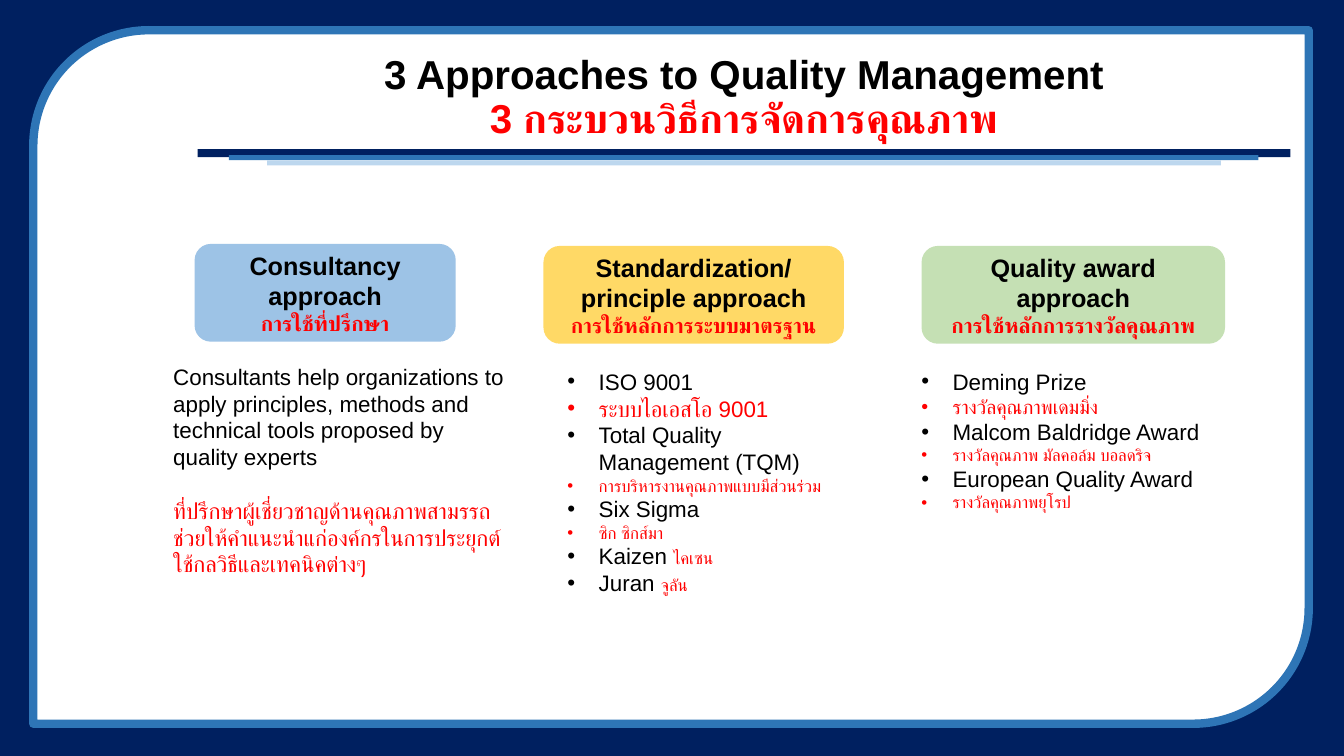
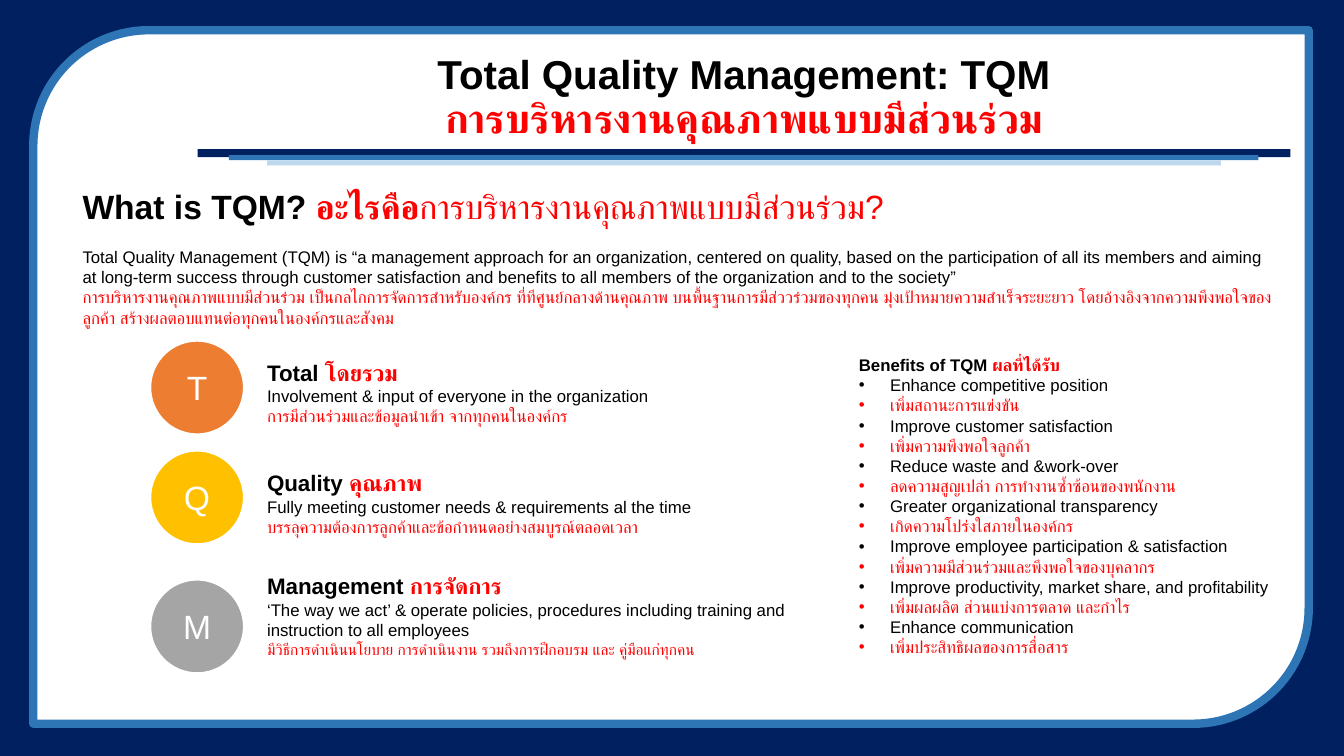
from lxml import etree
from pptx import Presentation
from pptx.dml.color import RGBColor
from pptx.enum import lang, shapes, text
from pptx.oxml.ns import qn

PX = 9144
FONT = "Arial"
NAVY, BLUE, PALE = "002060", "2E75B6", "BDD7EE"
BLACK, WHITE, RED = "000000", "FFFFFF", "FF0000"
KIND = shapes.MSO_SHAPE
MID = text.MSO_ANCHOR.MIDDLE


def hue(code):
    return RGBColor.from_string(code)


def box(px):
    return [n * PX for n in px]


def en(words, size, bold=False, color=BLACK):
    return words, size, bold, color


def th(words, size, bold=False):
    return en(words, size, bold, RED)


def mark(par):
    props = par._p.get_or_add_pPr()
    props.set("marL", str(31 * PX))
    props.set("indent", str(-31 * PX))
    etree.SubElement(props, qn("a:buFont"), typeface=FONT)
    etree.SubElement(props, qn("a:buChar"), char="•")


def say(frame, pars, bullets=(), center=False, middle=False, wrap=True, gap=0, lead=None):
    frame.word_wrap = wrap
    if middle:
        frame.vertical_anchor = MID
    for i, runs in enumerate(pars):
        par = frame.add_paragraph() if i else frame.paragraphs[0]
        if center:
            par.alignment = text.PP_ALIGN.CENTER
        if lead:
            par.line_spacing = lead
        if gap and i:
            par.space_before = gap * 12700
        if i in bullets:
            mark(par)
        for words, size, bold, color in runs:
            run = par.add_run()
            run.text = words
            font = run.font
            font.size, font.bold, font.name = int(size * 12700), bold, FONT
            font.color.rgb = hue(color)
            if color == RED:
                font.language_id = lang.MSO_LANGUAGE_ID.THAI
            etree.SubElement(run._r.get_or_add_rPr(), qn("a:cs"), typeface=FONT)


def note(slide, at, pars, **form):
    say(slide.shapes.add_textbox(*box(at)).text_frame, pars, **form)


def form(slide, kind, at, fill, line=None, width=0):
    shape = slide.shapes.add_shape(kind, *box(at))
    shape.shadow.inherit = False
    shape.fill.solid()
    shape.fill.fore_color.rgb = hue(fill)
    if line:
        shape.line.color.rgb = hue(line)
        shape.line.width = int(width * 12700)
    else:
        shape.line.fill.background()
    return shape


def page(deck, title, local):
    slide = deck.slides.add_slide(deck.slide_layouts[6])
    slide.background.fill.solid()
    slide.background.fill.fore_color.rgb = hue(NAVY)
    form(slide, KIND.ROUND_2_DIAG_RECTANGLE, (33, 30, 1265, 688), WHITE, BLUE, 6)
    bars = [((196, 148, 1084, 8), NAVY), ((227, 154, 1021, 5), BLUE), ((265, 159, 946, 5), PALE)]
    for at, fill in bars:
        form(slide, KIND.RECTANGLE, at, fill)
    note(slide, (196, 49, 1084, 97), [[en(title, 28.8, True)], [th(local, 28.8, True)]],
         center=True, middle=True, lead=0.9)
    return slide


def card(slide, at, fill, head, local):
    shape = form(slide, KIND.ROUNDED_RECTANGLE, at, fill)
    say(shape.text_frame, [[en(head, 18, True)], [th(local, 15, True)]], center=True, middle=True)


def step(slide, top, fill, key, base, wide, head, local, body, more, size=12):
    disc = form(slide, KIND.OVAL, (149, top, 93, 93), fill, WHITE, 1.5)
    say(disc.text_frame, [[en(key, 24, color=WHITE)]], center=True, middle=True)
    pars = [[en(head + " ", 16, True), th(local, 16, True)], [en(body, 12)], [th(more, size)]]
    note(slide, (255, base, wide, 96), pars)


def ways(deck):
    slide = page(deck, "3 Approaches to Quality Management", "3 กระบวนวิธีการจัดการคุณภาพ")
    card(slide, (193, 242, 259, 97), "9DC3E6", "Consultancy approach", "การใช้ที่ปรึกษา")
    card(slide, (539, 244, 298, 97), "FFD966", "Standardization/ principle approach",
         "การใช้หลักการระบบมาตรฐาน")
    card(slide, (914, 244, 301, 97), "C5E0B4", "Quality award approach", "การใช้หลักการรางวัลคุณภาพ")
    note(slide, (162, 355, 354, 258), [
        [en("Consultants help organizations to apply principles, methods and technical tools "
            "proposed by quality experts", 16)],
        [th("ที่ปรึกษาผู้เชี่ยวชาญด้านคุณภาพสามรรถช่วยให้คำแนะนำแก่องค์กรในการประยุกต์ใช้กลวิธีและเทคนิคต่างๆ", 16)],
    ], gap=19)
    note(slide, (553, 360, 298, 258), [
        [en("ISO 9001", 16)],
        [th("ระบบไอเอสโอ 9001", 16)],
        [en("Total Quality Management (TQM)", 16)],
        [th("การบริหารงานคุณภาพแบบมีส่วนร่วม", 12)],
        [en("Six Sigma", 16)],
        [th("ซิก ซิกส์มา", 12)],
        [en("Kaizen ", 16), th("ไคเซน", 12)],
        [en("Juran ", 16), th("จูลัน", 12)],
    ], bullets=range(8))
    note(slide, (904, 360, 354, 212), [
        [en("Deming Prize", 16)],
        [th("รางวัลคุณภาพเดมมิ่ง", 14)],
        [en("Malcom Baldridge Award", 16)],
        [th("รางวัลคุณภาพ มัลคอล์ม บอลดริจ", 12)],
        [en("European Quality Award", 16)],
        [th("รางวัลคุณภาพยุโรป", 12)],
    ], bullets=range(6))


def total(deck):
    slide = page(deck, "Total Quality Management: TQM", "การบริหารงานคุณภาพแบบมีส่วนร่วม")
    note(slide, (72, 180, 879, 107), [
        [en("What is TQM? ", 24, True), th("อะไรคือ", 24, True),
         th("การบริหารงานคุณภาพแบบมีส่วนร่วม?", 24)],
    ], wrap=False)
    gains = [
        ("Enhance competitive position", "เพิ่มสถานะการแข่งขัน"),
        ("Improve customer satisfaction", "เพิ่มความพึงพอใจลูกค้า"),
        ("Reduce waste and &work-over", "ลดความสูญเปล่า การทำงานซ้ำซ้อนของพนักงาน"),
        ("Greater organizational transparency", "เกิดความโปร่งใสภายในองค์กร"),
        ("Improve employee participation & satisfaction", "เพิ่มความมีส่วนร่วมและพึงพอใจของบุคลากร"),
        ("Improve productivity, market share, and profitability", "เพิ่มผลผลิต ส่วนแบ่งการตลาด และกำไร"),
        ("Enhance communication", "เพิ่มประสิทธิผลของการสื่อสาร"),
    ]
    pars = [[en("Benefits of TQM ", 12, True), th("ผลที่ได้รับ", 12, True)]]
    for gain, local in gains:
        pars += [[en(gain, 12)], [th(local, 12)]]
    note(slide, (842, 347, 452, 378), pars, bullets=range(1, len(pars)))
    note(slide, (72, 240, 1208, 127), [
        [en("Total Quality Management (TQM) is “a management approach for an organization, centered on "
            "quality, based on the participation of all its members and aiming at long-term success through "
            "customer satisfaction and benefits to all members of the organization and to the society”", 12)],
        [th("การบริหารงานคุณภาพแบบมีส่วนร่วม เป็นกลไกการจัดการสำหรับองค์กร ที่ทีศูนย์กลางด้านคุณภาพ "
            "บนพื้นฐานการมีส่ววร่วมของทุกคน มุ่งเป้าหมายความสำเร็จระยะยาว "
            "โดยอ้างอิงจากความพึงพอใจของลูกค้า สร้างผลตอบแทนต่อทุกคนในองค์กรและสังคม", 12)],
    ])
    step(slide, 338, "ED7D31", "T", 351, 432, "Total", "โดยรวม",
         "Involvement & input of everyone in the organization",
         "การมีส่วนร่วมและข้อมูลนำเข้า จากทุกคนในองค์กร")
    step(slide, 447, "FFC000", "Q", 461, 521, "Quality", "คุณภาพ",
         "Fully meeting customer needs & requirements al the time",
         "บรรลุความต้องการลูกค้าและข้อกำหนดอย่างสมบูรณ์ตลอดเวลา")
    step(slide, 575, "A5A5A5", "M", 563, 541, "Management", "การจัดการ",
         "‘The way we act’ & operate policies, procedures including training and instruction to all employees",
         "มีวิธีการดำเนินนโยบาย การดำเนินงาน รวมถึงการฝึกอบรม และ คู่มือแก่ทุกคน", 11)


def main():
    deck = Presentation()
    deck.slide_width, deck.slide_height = box((1333, 750))
    ways(deck)
    total(deck)
    deck.save("out.pptx")


if __name__ == "__main__":
    main()
